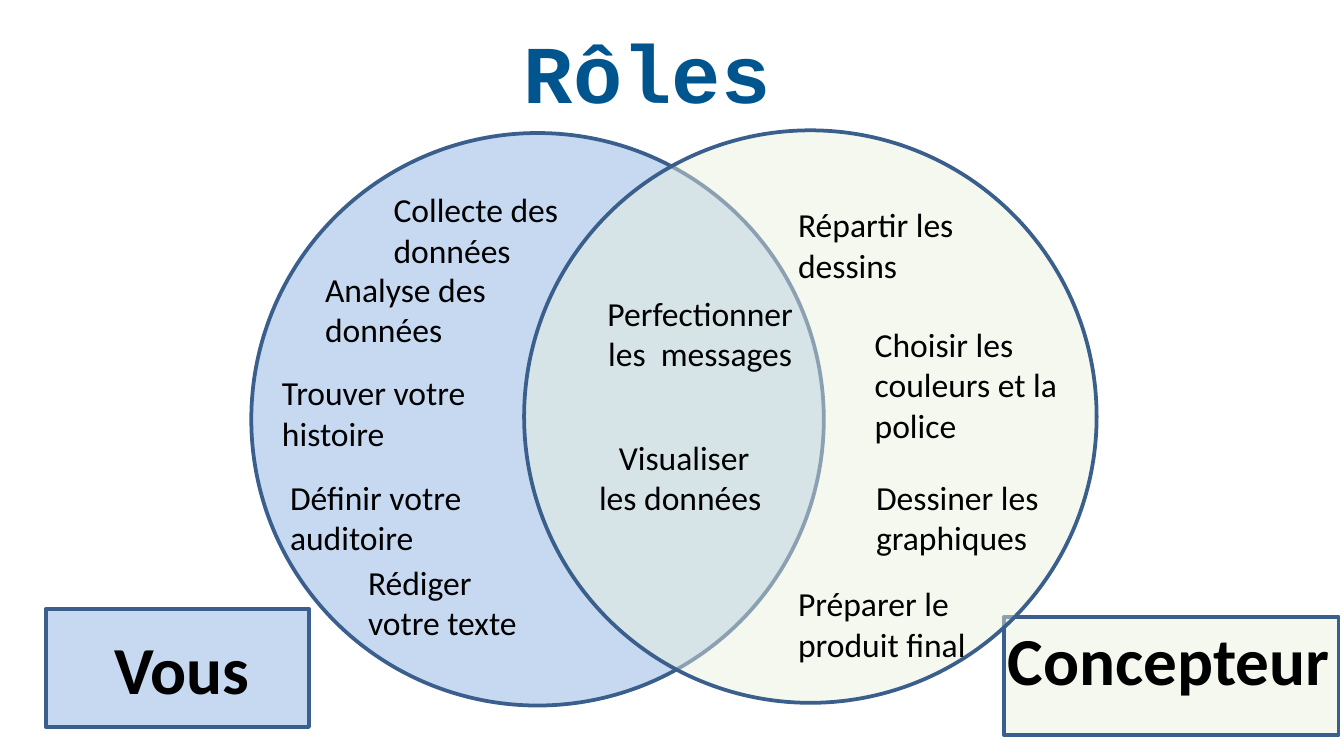
from lxml import etree
from pptx import Presentation
from pptx.dml.color import RGBColor
from pptx.enum.shapes import MSO_SHAPE
from pptx.enum.text import MSO_ANCHOR, MSO_AUTO_SIZE, PP_ALIGN
from pptx.oxml.ns import qn
from pptx.util import Inches, Pt

RECT, OVAL = MSO_SHAPE.RECTANGLE, MSO_SHAPE.OVAL
LEFT, CENTER = PP_ALIGN.LEFT, PP_ALIGN.CENTER
TOP, MIDDLE = MSO_ANCHOR.TOP, MSO_ANCHOR.MIDDLE
FIT, FIXED = MSO_AUTO_SIZE.SHAPE_TO_FIT_TEXT, MSO_AUTO_SIZE.NONE

BLUE = RGBColor(0xC6, 0xD9, 0xF1)
GREEN = RGBColor(0xEB, 0xF1, 0xDE)
EDGE = RGBColor(0x3A, 0x5F, 0x8C)
TITLE = RGBColor(0x00, 0x55, 0x8E)
BLACK = RGBColor(0, 0, 0)

# Widescreen slide, 16:9
deck = Presentation()
deck.slide_width = Inches(10)
deck.slide_height = Inches(10 * 9 / 16)
slide = deck.slides.add_slide(deck.slide_layouts[6])


def add_area(kind, x, y, w, h, color, alpha=None):
    area = slide.shapes.add_shape(kind, Inches(x), Inches(y), Inches(w), Inches(h))
    area.shadow.inherit = False
    area.fill.solid()
    area.fill.fore_color.rgb = color
    area.line.color.rgb = EDGE
    area.line.width = Pt(2)
    if alpha:
        tint = area.fill._xPr.find(qn("a:solidFill"))[0]
        etree.SubElement(tint, qn("a:alpha")).set("val", str(alpha * 1000))


def add_text(text, x, y, w, h=0.71, size=18, font="Calibri", color=BLACK,
             bold=False, align=LEFT, anchor=TOP, fit=FIT):
    box = slide.shapes.add_textbox(Inches(x), Inches(y), Inches(w), Inches(h))
    frame = box.text_frame
    frame.word_wrap = True
    frame.auto_size = fit
    frame.vertical_anchor = anchor
    para = frame.paragraphs[0]
    para.alignment = align
    run = para.add_run()
    run.text = text
    run.font.size = Pt(size)
    run.font.name = font
    run.font.bold = bold
    run.font.color.rgb = color


# Role labels
add_area(RECT, 7.47, 4.59, 2.49, 0.88, GREEN, alpha=46)
add_area(RECT, 0.34, 4.53, 1.96, 0.88, BLUE)
add_text("Vous", 0.75, 4.62, 1.41, size=36, bold=True)
add_text("Concepteur", 7.4, 4.55, 2.63, size=36, bold=True)

# Overlapping circles
SIDE = 4.26
add_area(OVAL, 1.87, 0.99, SIDE, SIDE, BLUE)
add_area(OVAL, 3.9, 0.97, SIDE, SIDE, GREEN, alpha=46)

# Tasks of each side
tasks = [
    ("Collecte des données", 2.83, 1.36, 1.5),
    ("Analyse des  données", 2.32, 1.95, 1.71),
    ("Trouver votre histoire", 2, 2.72, 1.83),
    ("Définir votre auditoire", 2.06, 3.5, 2.06),
    ("Rédiger votre texte", 2.64, 4.13, 1.5),
    ("Répartir les dessins", 5.84, 1.47, 1.66),
    ("Choisir les couleurs et la police", 6.41, 2.36, 1.66, 1.01),
    ("Dessiner les graphiques", 6.42, 3.5, 1.66),
    ("Préparer le produit final", 5.84, 4.29, 1.66),
]
for task in tasks:
    add_text(*task)

# Shared tasks
add_text("Perfectionner les  messages", 4.37, 2.13, 1.68, align=CENTER)
add_text("Visualiser les données ", 4.34, 3.2, 1.5, align=CENTER)

# Title
add_text("Rôles ", 0, 0.01, 10, 1.03, size=44, font="Courier New", color=TITLE,
         bold=True, align=CENTER, anchor=MIDDLE, fit=FIXED)

deck.save("out.pptx")
